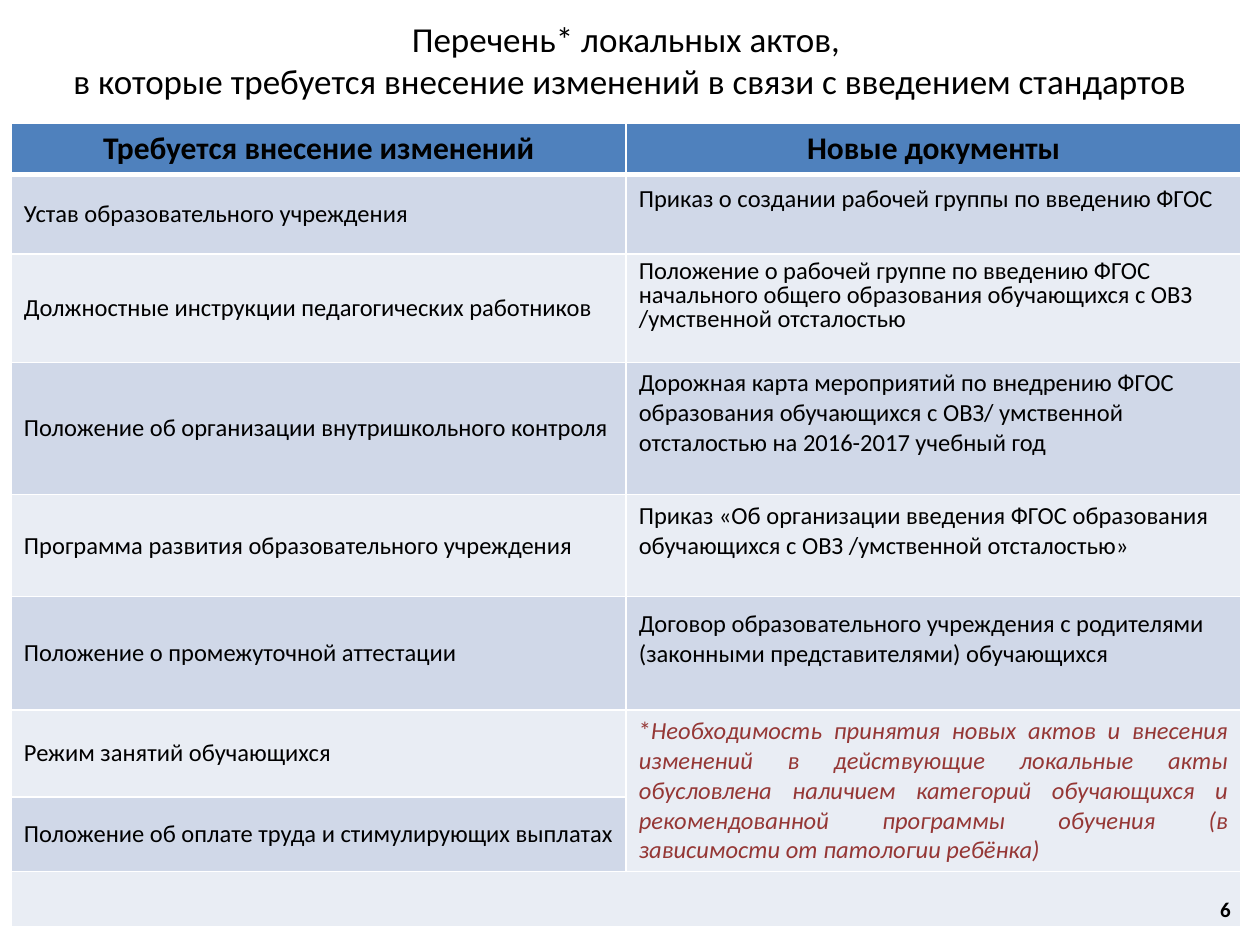
from lxml import etree
from pptx import Presentation
from pptx.dml.color import RGBColor
from pptx.enum.text import MSO_ANCHOR, MSO_AUTO_SIZE, PP_ALIGN
from pptx.oxml.ns import qn
from pptx.util import Inches, Pt

CENTER, JUSTIFY = PP_ALIGN.CENTER, PP_ALIGN.JUSTIFY
TOP, MIDDLE = MSO_ANCHOR.TOP, MSO_ANCHOR.MIDDLE

BLACK = RGBColor(0x00, 0x00, 0x00)
WHITE = RGBColor(0xFF, 0xFF, 0xFF)
HEADER_BLUE = RGBColor(0x4F, 0x81, 0xBD)
BAND_DARK = RGBColor(0xD0, 0xD8, 0xE8)
BAND_LIGHT = RGBColor(0xE9, 0xED, 0xF4)
NOTE_RED = RGBColor(0x95, 0x37, 0x35)

FONT = "Calibri"
TITLE = ("Перечень* локальных актов, \v"
         "в которые требуется внесение изменений в связи с введением стандартов")
HEADERS = ("Требуется внесение изменений", "Новые документы")
CHANGED_ACTS = (
    "Устав образовательного учреждения",
    "Должностные инструкции педагогических работников",
    "Положение об организации внутришкольного контроля",
    "Программа развития образовательного учреждения",
    "Положение о промежуточной аттестации",
    "Режим занятий обучающихся",
    "Положение об оплате труда и стимулирующих выплатах",
)
# Text, top margin in inches, line spacing
NEW_ACTS = (
    ("Приказ о создании рабочей группы по введению ФГОС", 0.08, 1.0),
    ("Положение о рабочей группе по введению ФГОС начального общего образования "
     "обучающихся с ОВЗ /умственной отсталостью", 0.05, 0.8),
    ("Дорожная карта мероприятий по внедрению ФГОС образования обучающихся с ОВЗ/ "
     "умственной отсталостью на 2016-2017 учебный год", 0.05, 1.0),
    ("Приказ «Об организации введения ФГОС образования обучающихся с ОВЗ "
     "/умственной отсталостью»", 0.05, 1.0),
    ("Договор образовательного учреждения с родителями (законными представителями) "
     "обучающихся", 0.1, 1.0),
)
NOTE = ("Необходимость принятия новых актов и внесения изменений в действующие "
        "локальные акты обусловлена наличием категорий обучающихся и рекомендованной "
        "программы обучения (в зависимости от патологии ребёнка)")

TABLE_LEFT, TABLE_TOP, COLUMN_WIDTH = 0.09, 0.98, 4.88
ROW_HEIGHTS = (0.4, 0.63, 0.86, 1.05, 0.81, 0.9, 0.69, 0.58, 0.44)
NOTE_ROW, LAST_ROW = 6, len(ROW_HEIGHTS) - 1


def format_paragraph(para, size, bold=False, color=BLACK, align=None):
    para.font.name = FONT
    para.font.size = Pt(size)
    para.font.bold = bold
    para.font.color.rgb = color
    para.alignment = align


def set_borders(cell, bottom_width):
    """Draw white cell edges; only the bottom one varies in width (points)."""
    properties = cell._tc.get_or_add_tcPr()
    edges = (("a:lnL", 1), ("a:lnR", 1), ("a:lnT", 1), ("a:lnB", bottom_width))
    for index, (tag, width) in enumerate(edges):
        line = etree.Element(qn(tag), w=str(Pt(width)))
        fill = etree.SubElement(line, qn("a:solidFill"))
        etree.SubElement(fill, qn("a:srgbClr"), val=str(WHITE))
        properties.insert(index, line)


def write_cell(cell, text, size=14, anchor=MIDDLE, **style):
    cell.vertical_anchor = anchor
    para = cell.text_frame.paragraphs[0]
    para.text = text
    format_paragraph(para, size, **style)
    return para


def add_title(page, width):
    title = page.shapes.title
    title.left, title.top, title.width, title.height = 0, 0, width, Inches(0.94)
    frame = title.text_frame
    frame.text = TITLE
    frame.auto_size = MSO_AUTO_SIZE.NONE
    frame.vertical_anchor = MIDDLE
    format_paragraph(frame.paragraphs[0], 20, align=CENTER)


def add_grid(page):
    """Add the banded, bordered table without its text."""
    table = page.shapes.add_table(
        len(ROW_HEIGHTS), 2, Inches(TABLE_LEFT), Inches(TABLE_TOP),
        Inches(2 * COLUMN_WIDTH), Inches(sum(ROW_HEIGHTS))).table
    table.first_row = table.horz_banding = False
    for column in table.columns:
        column.width = Inches(COLUMN_WIDTH)
    for index, height in enumerate(ROW_HEIGHTS):
        row = table.rows[index]
        row.height = Inches(height)
        band = BAND_DARK if index % 2 else BAND_LIGHT
        for cell in row.cells:
            cell.fill.solid()
            cell.fill.fore_color.rgb = band if index else HEADER_BLUE
            set_borders(cell, 1 if index else 3)
    table.cell(NOTE_ROW, 1).merge(table.cell(NOTE_ROW + 1, 1))
    table.cell(LAST_ROW, 0).merge(table.cell(LAST_ROW, 1))
    return table


def fill_table(table):
    for column, header in enumerate(HEADERS):
        write_cell(table.cell(0, column), header, 18, TOP, bold=True, align=CENTER)
    for row, act in enumerate(CHANGED_ACTS, start=1):
        write_cell(table.cell(row, 0), act)
    for row, (act, margin, spacing) in enumerate(NEW_ACTS, start=1):
        cell = table.cell(row, 1)
        cell.margin_top = Inches(margin)
        write_cell(cell, act, anchor=TOP).line_spacing = spacing
    note = write_cell(table.cell(NOTE_ROW, 1), "*", color=NOTE_RED, align=JUSTIFY)
    span = note.add_run()
    span.text = NOTE
    span.font.italic = True


def add_page_number(page, number):
    box = page.shapes.add_textbox(Inches(9.55), Inches(7.02), Inches(0.35), Inches(0.39))
    frame = box.text_frame
    frame.word_wrap = True
    frame.vertical_anchor = MIDDLE
    frame.text = number
    format_paragraph(frame.paragraphs[0], 12, bold=True, align=CENTER)


def main():
    deck = Presentation()
    deck.slide_width, deck.slide_height = Inches(10), Inches(7.5)
    page = deck.slides.add_slide(deck.slide_layouts.get_by_name("Title Only"))
    add_title(page, deck.slide_width)
    fill_table(add_grid(page))
    add_page_number(page, "6")
    deck.save("out.pptx")


if __name__ == "__main__":
    main()
